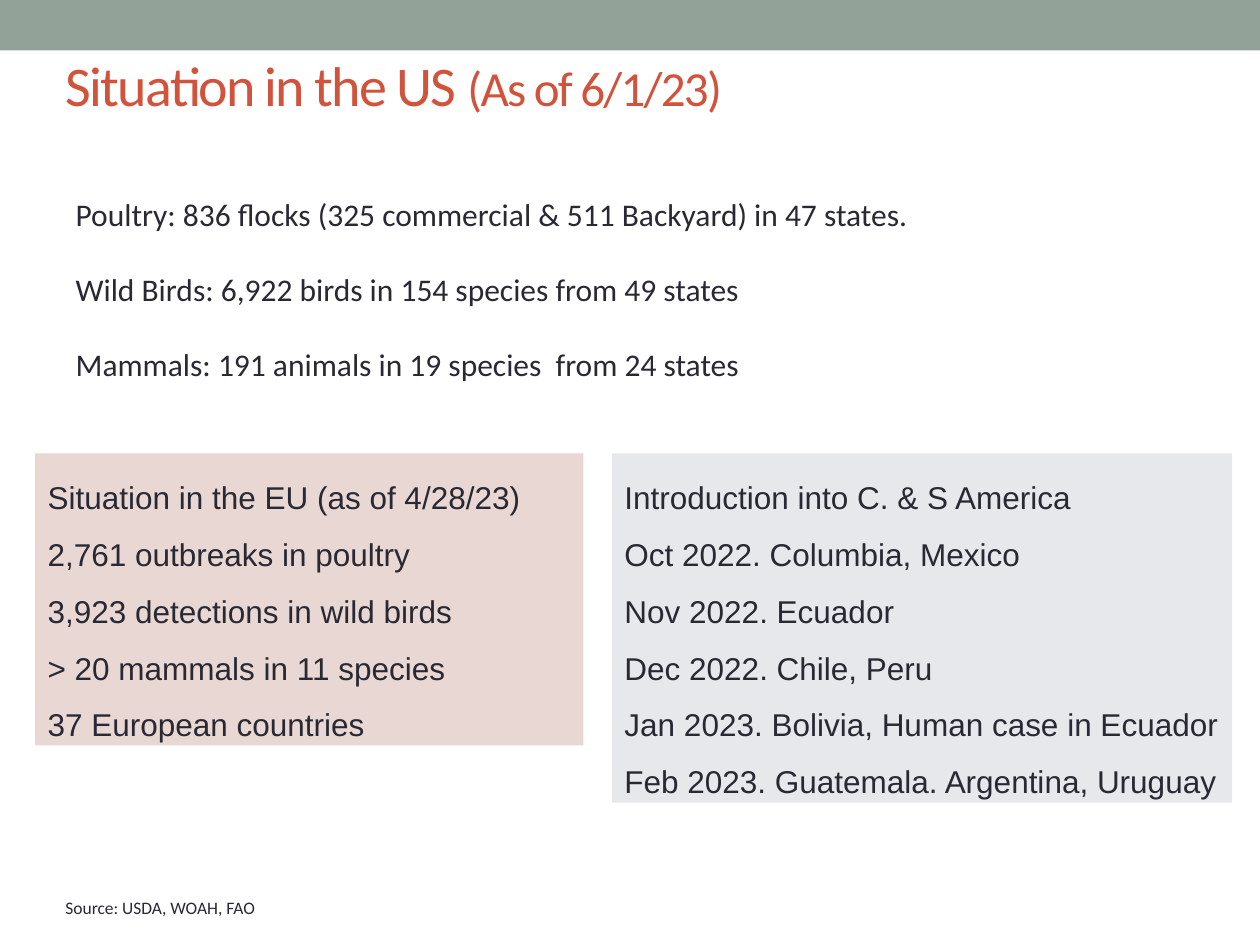
import dataclasses

import pptx
import pptx.dml.color
import pptx.enum.shapes
import pptx.enum.text
import pptx.util
from pptx.util import Cm, Pt

ANCHOR = pptx.enum.text.MSO_ANCHOR
FIT = pptx.enum.text.MSO_AUTO_SIZE
LEFT = pptx.enum.text.PP_ALIGN.LEFT


@dataclasses.dataclass(frozen=True)
class Theme:
    band: str = "93A299"
    title: str = "D2533C"
    ink: str = "292934"
    rose: str = "E9D7D3"
    mist: str = "E6E8EC"
    heading_font: str = "Calibri"
    panel_font: str = "Arial"
    title_size: int = 32
    date_size: int = 28
    text_size: int = 18
    source_size: int = 10


THEME = Theme()

US_COUNTS = [
    "Poultry: 836 flocks (325 commercial & 511 Backyard) in 47 states.",
    "Wild Birds: 6,922 birds in 154 species from 49 states",
    "Mammals: 191 animals in 19 species  from 24 states",
]
EU_SITUATION = [
    "Situation in the EU (as of 4/28/23)",
    "2,761 outbreaks in poultry",
    "3,923 detections in wild birds",
    "> 20 mammals in 11 species",
    "37 European countries",
]
AMERICAS_SPREAD = [
    "Introduction into C. & S America",
    "Oct 2022. Columbia, Mexico",
    "Nov 2022. Ecuador",
    "Dec 2022. Chile, Peru",
    "Jan 2023. Bolivia, Human case in Ecuador",
    "Feb 2023. Guatemala. Argentina, Uruguay",
]


def apply(target, values):
    for name, value in values.items():
        setattr(target, name, value)


def color(code):
    return pptx.dml.color.RGBColor.from_string(code)


def place(shape, left, top, width, height):
    apply(shape, {"left": Cm(left), "top": Cm(top),
                  "width": Cm(width), "height": Cm(height)})


def style_font(font, name, size, code):
    apply(font, {"name": name, "size": Pt(size)})
    font.color.rgb = color(code)


def write_lines(box, lines, font_name, size, gap=0, spacing=1.0, wrap=True):
    """Fill a box with one paragraph per line, with gap points between them."""
    frame = box.text_frame
    apply(frame, {"word_wrap": wrap, "auto_size": FIT.NONE,
                  "vertical_anchor": ANCHOR.TOP})
    for index, line in enumerate(lines):
        para = frame.paragraphs[0] if index == 0 else frame.add_paragraph()
        apply(para, {"alignment": LEFT, "line_spacing": spacing,
                     "space_before": Pt(gap if index else 0)})
        span = para.add_run()
        span.text = line
        style_font(span.font, font_name, size, THEME.ink)


def add_block(page, bounds, fill):
    block = page.shapes.add_shape(
        pptx.enum.shapes.MSO_SHAPE.RECTANGLE, *map(Cm, bounds))
    block.shadow.inherit = False
    block.fill.solid()
    block.fill.fore_color.rgb = color(fill)
    block.line.fill.background()
    return block


def add_panel(page, bounds, fill, lines):
    panel = add_block(page, bounds, fill)
    write_lines(panel, lines, THEME.panel_font, THEME.text_size, spacing=1.5)


def fill_title(page):
    title = page.shapes.title
    place(title, 1.07, 0.43, 23.93, 2.54)
    apply(title.text_frame, {"vertical_anchor": ANCHOR.MIDDLE,
                             "auto_size": FIT.NONE})
    para = title.text_frame.paragraphs[0]
    para.alignment = LEFT
    for text, size in (("Situation in the US ", THEME.title_size),
                       ("(As of 6/1/23)", THEME.date_size)):
        span = para.add_run()
        span.text = text
        style_font(span.font, THEME.heading_font, size, THEME.title)
        span.font._element.set("spc", "-100")


def fill_counts(page):
    body = page.placeholders[1]
    place(body, 1.27, 3.81, 20.68, 4.11)
    write_lines(body, US_COUNTS, THEME.heading_font, THEME.text_size, gap=21.2)
    for para in body.text_frame.paragraphs:
        properties = para._p.get_or_add_pPr()
        properties.set("marL", "0")
        properties.set("indent", "0")
        bullet = properties.makeelement(pptx.oxml.ns.qn("a:buNone"), {})
        properties.append(bullet)


def add_source(page):
    box = page.shapes.add_textbox(Cm(1.07), Cm(17.96), Cm(4.42), Cm(0.69))
    write_lines(box, ["Source: USDA, WOAH, FAO"], THEME.heading_font,
                THEME.source_size, wrap=False)


def main():
    deck = pptx.Presentation()
    apply(deck, {"slide_width": Cm(25.4), "slide_height": Cm(19.05)})
    page = deck.slides.add_slide(deck.slide_layouts[1])
    add_block(page, (0, 0, 25.4, 1.02), THEME.band)
    fill_title(page)
    fill_counts(page)
    add_panel(page, (0.71, 9.14, 11.05, 5.89), THEME.rose, EU_SITUATION)
    add_panel(page, (12.34, 9.14, 12.5, 7.04), THEME.mist, AMERICAS_SPREAD)
    add_source(page)
    deck.save("out.pptx")


if __name__ == "__main__":
    main()
